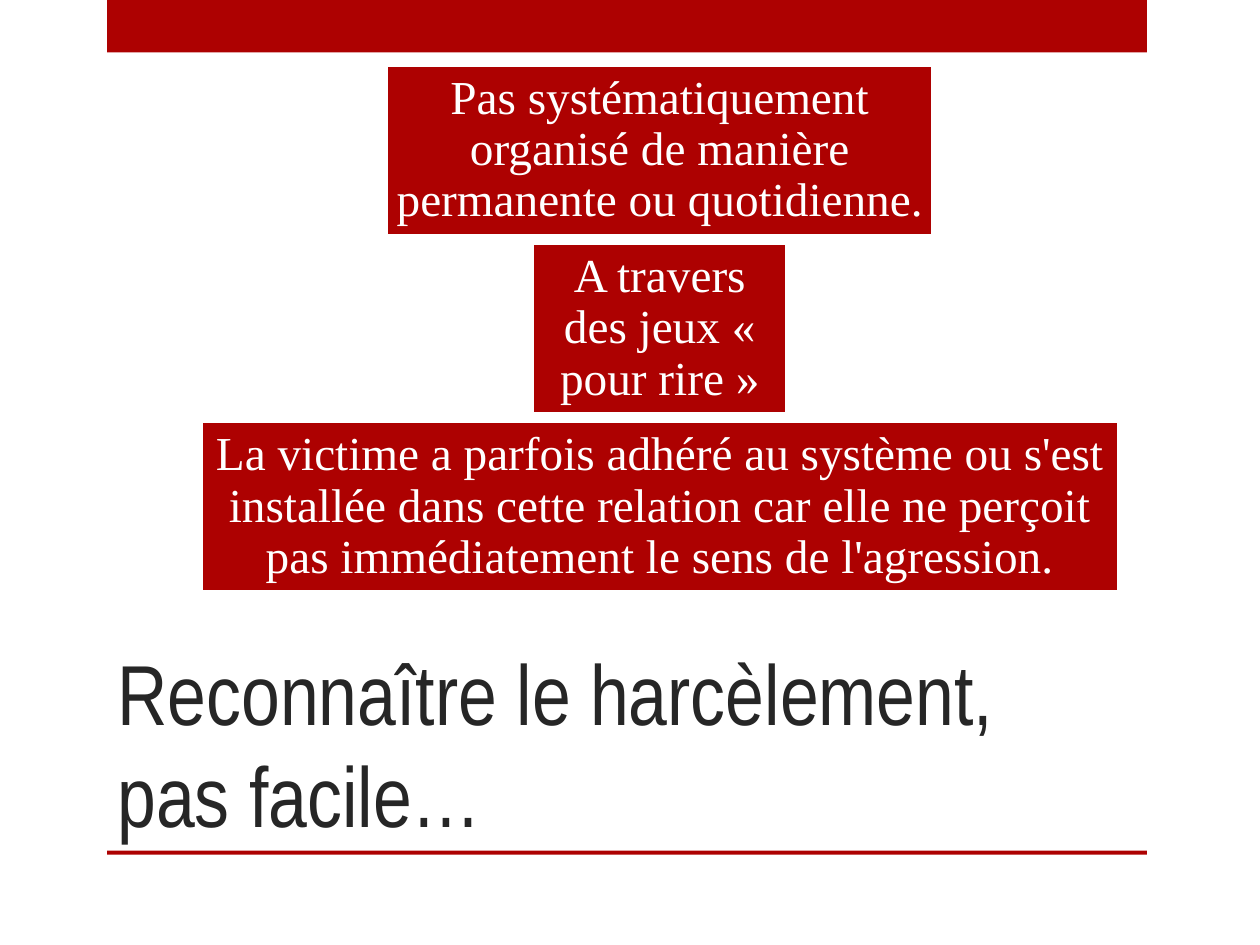
from dataclasses import dataclass

from pptx import Presentation
from pptx.dml.color import RGBColor
from pptx.enum.shapes import MSO_SHAPE
from pptx.enum.text import MSO_ANCHOR, PP_ALIGN
from pptx.util import Cm, Pt

RECTANGLE = MSO_SHAPE.RECTANGLE
MIDDLE, BOTTOM = MSO_ANCHOR.MIDDLE, MSO_ANCHOR.BOTTOM
CENTER, LEFT = PP_ALIGN.CENTER, PP_ALIGN.LEFT

COLOURS = {"red": "AD0101", "white": "FFFFFF", "dark": "262626"}
STACK_CENTER, STACK_TOP = 13.3, 1.32
BOX_HEIGHT, BOX_PITCH = 3.43, 3.59
INSET = Cm(0.17)


@dataclass
class Bar:
    top: float
    height: float


@dataclass
class Sign:
    text: str
    width: float


BARS = [Bar(0, 1.06), Bar(17.15, 0.08)]
SIGNS = [
    Sign("Pas systématiquement organisé de manière permanente ou quotidienne.", 11),
    Sign("A travers des jeux « pour rire »", 5.13),
    Sign(
        "La victime a parfois adhéré au système ou s'est installée dans cette "
        "relation car elle ne perçoit pas immédiatement le sens de l'agression.",
        18.49,
    ),
]
SIGN_FRAME = {
    "word_wrap": True,
    "vertical_anchor": MIDDLE,
    "margin_left": INSET,
    "margin_right": INSET,
    "margin_top": INSET,
    "margin_bottom": INSET,
}
SIGN_PARA = {"alignment": CENTER, "line_spacing": 0.9}
SIGN_FONT = {"name": "Times New Roman", "size": Pt(27)}
TITLE_PLACE = {
    "left": Cm(2.11), "top": Cm(12.7), "width": Cm(18.85), "height": Cm(4.45),
}
TITLE_FRAME = {"word_wrap": True, "vertical_anchor": BOTTOM}
TITLE_FONT = {"name": "Arial Narrow", "size": Pt(48.6)}


def colour(name: str) -> RGBColor:
    return RGBColor.from_string(COLOURS[name])


def apply(target, values: dict) -> None:
    for name, value in values.items():
        setattr(target, name, value)


def add_red_box(page, left: float, top: float, width: float, height: float):
    box = page.shapes.add_shape(RECTANGLE, Cm(left), Cm(top), Cm(width), Cm(height))
    box.shadow.inherit = False
    box.fill.solid()
    box.fill.fore_color.rgb = colour("red")
    box.line.fill.background()
    return box


def write(box, text: str, frame: dict, para_values: dict, font: dict, ink: str) -> None:
    apply(box.text_frame, frame)
    para = box.text_frame.paragraphs[0]
    apply(para, para_values)
    span = para.add_run()
    span.text = text
    apply(span.font, font)
    span.font.color.rgb = colour(ink)


def add_sign(page, sign: Sign, row: int) -> None:
    left = STACK_CENTER - sign.width / 2
    box = add_red_box(page, left, STACK_TOP + row * BOX_PITCH, sign.width, BOX_HEIGHT)
    box.line.color.rgb = colour("white")
    box.line.width = Pt(1.75)
    write(box, sign.text, SIGN_FRAME, SIGN_PARA, SIGN_FONT, "white")


def main() -> None:
    deck = Presentation()
    deck.slide_width, deck.slide_height = Cm(25.4), Cm(19.05)
    page = deck.slides.add_slide(deck.slide_layouts[5])

    for bar in BARS:
        add_red_box(page, 2.16, bar.top, 20.96, bar.height)

    title = page.shapes.title
    apply(title, TITLE_PLACE)
    write(title, "Reconnaître le harcèlement, pas facile…",
          TITLE_FRAME, {"alignment": LEFT}, TITLE_FONT, "dark")

    for row, sign in enumerate(SIGNS):
        add_sign(page, sign, row)

    deck.save("out.pptx")


if __name__ == "__main__":
    main()
